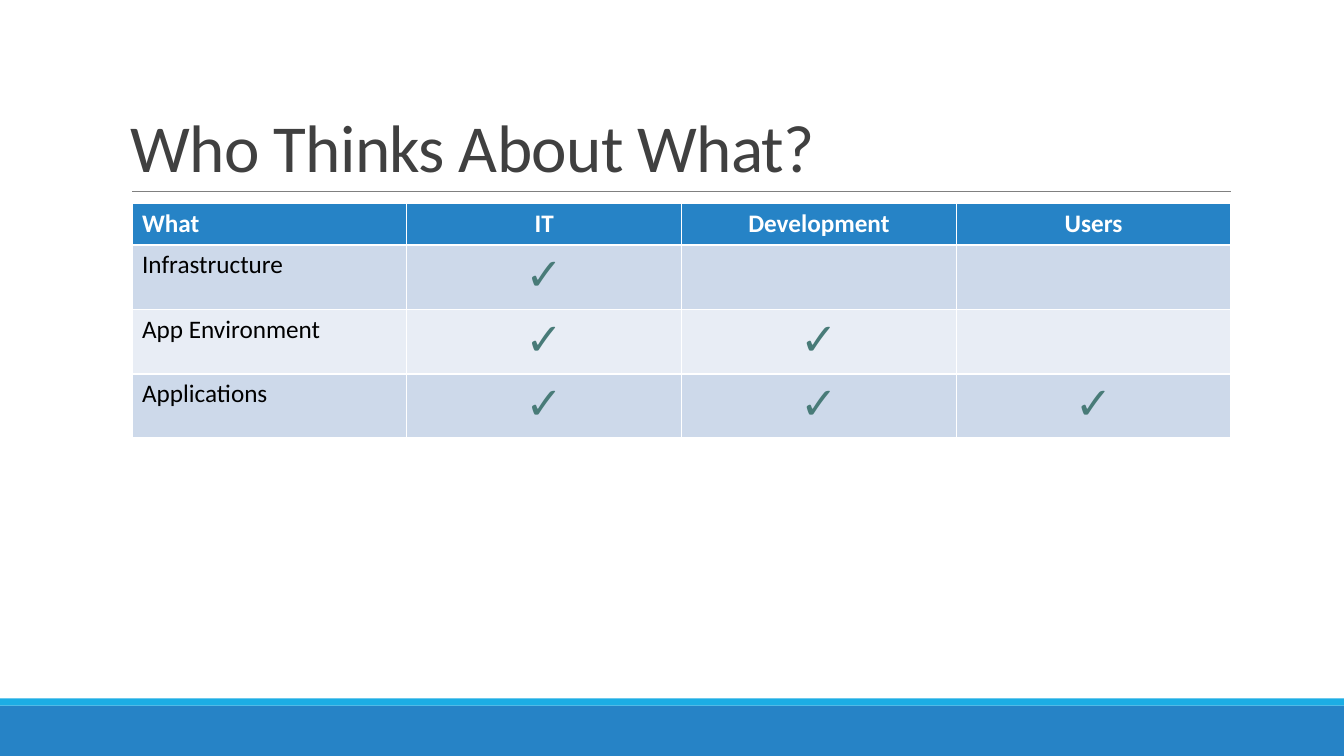
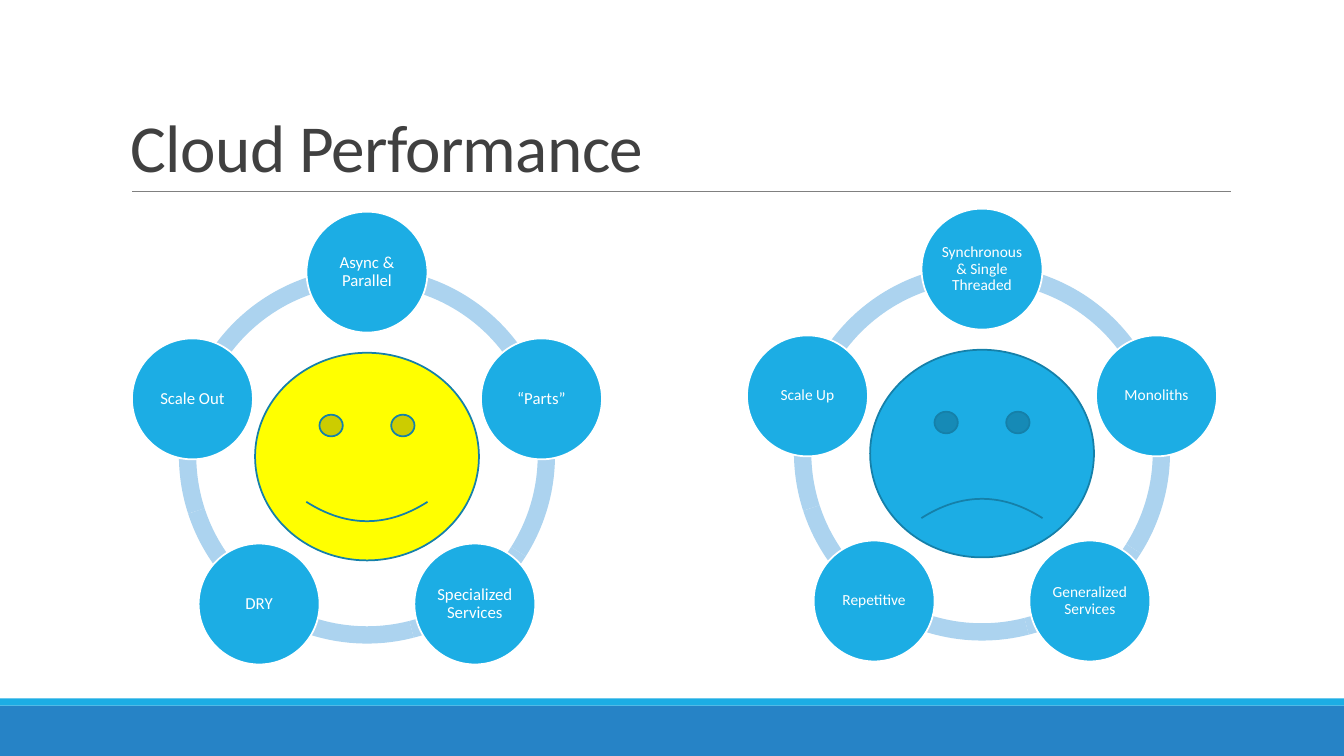
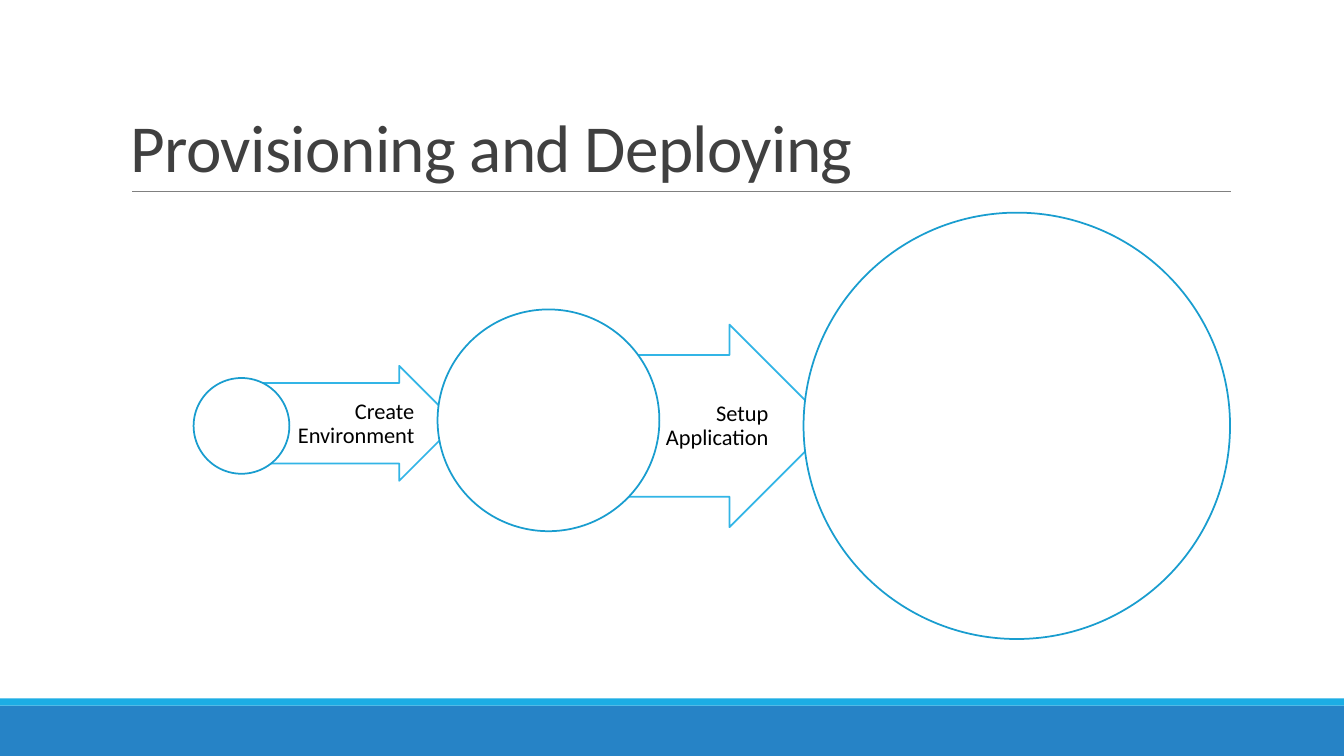
import math

import lxml.etree
import pptx
import pptx.dml.color
import pptx.enum.shapes
import pptx.enum.text
import pptx.oxml.ns
import pptx.util

Inches = pptx.util.Inches
Pt = pptx.util.Pt
Preset = pptx.enum.shapes.MSO_SHAPE
Align = pptx.enum.text.PP_ALIGN
Anchor = pptx.enum.text.MSO_ANCHOR
rgb = pptx.dml.color.RGBColor.from_string
qn = pptx.oxml.ns.qn

BLUE = "2683C6"
SKY = "1CADE4"
PALE_BLUE = "ACD3EF"
WHITE = "FFFFFF"
BLACK = "000000"
OUTLINE = "199DCF"


def write(frame, text, size=18, color=BLACK, font="Calibri", bold=False,
          align=Align.LEFT, anchor=None, spacing=None, tracking=None, insets=None):
    """Fill a text frame with one formatted paragraph; insets run left, top, right, bottom."""
    frame.word_wrap = True
    if anchor is not None:
        frame.vertical_anchor = anchor
    if insets:
        (frame.margin_left, frame.margin_top,
         frame.margin_right, frame.margin_bottom) = map(Inches, insets)
    paragraph = frame.paragraphs[0]
    paragraph.alignment = align
    if spacing:
        paragraph.line_spacing = spacing
    run = paragraph.add_run()
    run.text = text
    run.font.size = Pt(size)
    run.font.name = font
    run.font.bold = bold
    run.font.color.rgb = rgb(color)
    if tracking:
        run.font._element.set("spc", str(round(tracking * 100)))


def draw(slide, preset, box, fill, line=None):
    """Add a flat preset shape; box is left, top, width, height in inches."""
    shape = slide.shapes.add_shape(preset, *map(Inches, box))
    shape.shadow.inherit = False
    shape.fill.solid()
    shape.fill.fore_color.rgb = rgb(fill)
    if line:
        shape.line.color.rgb = rgb(line)
        shape.line.width = Pt(1.25)
    else:
        shape.line.fill.background()
    return shape


deck = pptx.Presentation()
deck.slide_width = Inches(13.33)
deck.slide_height = Inches(7.5)

# Shared frame: bottom bands, rule and title
slides = []
for heading in ("Who Thinks About What?", "Cloud Performance", "Provisioning and Deploying"):
    slide = deck.slides.add_slide(deck.slide_layouts[6])
    draw(slide, Preset.RECTANGLE, (0, 7, 13.33, 0.5), BLUE)
    draw(slide, Preset.RECTANGLE, (0, 6.93, 13.33, 0.07), SKY)
    rule = slide.shapes.add_connector(
        pptx.enum.shapes.MSO_CONNECTOR.STRAIGHT,
        Inches(1.31), Inches(1.9), Inches(12.21), Inches(1.9))
    rule.line.color.rgb = rgb("808080")
    rule.line.width = Pt(0.5)
    lxml.etree.SubElement(rule._element.spPr, qn("a:effectLst"))
    title = slide.shapes.add_textbox(Inches(1.2), Inches(0.31), Inches(11), Inches(1.59))
    write(title.text_frame, heading, size=48, color="404040",
          anchor=Anchor.BOTTOM, spacing=0.85, tracking=-0.5)
    slides.append(slide)
roles_slide, performance_slide, deploying_slide = slides

# Who thinks about what
concerns = [
    ("What", "IT", "Development", "Users"),
    ("Infrastructure", "✓", "", ""),
    ("App Environment", "✓", "✓", ""),
    ("Applications", "✓", "✓", "✓"),
]
row_fills = (BLUE, "CDD9EA", "E8EDF5", "CDD9EA")
row_heights = (0.41, 0.64, 0.64, 0.6)
matrix = roles_slide.shapes.add_table(
    4, 4, Inches(1.31), Inches(2.02), Inches(10.9), Inches(sum(row_heights))).table
for row, (entries, fill, height) in enumerate(zip(concerns, row_fills, row_heights)):
    matrix.rows[row].height = Inches(height)
    for column, entry in enumerate(entries):
        cell = matrix.cell(row, column)
        cell.fill.solid()
        cell.fill.fore_color.rgb = rgb(fill)
        align = Align.CENTER if column else Align.LEFT
        if entry == "✓":
            write(cell.text_frame, entry, size=32, color="487B78", font="Arial",
                  bold=True, align=align)
        elif entry:
            write(cell.text_frame, entry, color=BLACK if row else WHITE,
                  bold=row == 0, align=align)

# Good and bad habits around a happy and a sad face
RING = 3.73
NODE = 1.2
ORBIT = 1.82
FACE_WIDTH, FACE_HEIGHT = 2.22, 2.06
arc_bounds = (32.4, 75.6, 118.8, 162, 205.2)
cycles = [
    (9.74, 4.49, 11, SKY, -0.047,
     ("Synchronous & Single Threaded", "Monoliths", "Generalized Services",
      "Repetitive", "Scale Up")),
    (3.64, 4.52, 12, "FFFF00", 0.047,
     ("Async & Parallel", "“Parts”", "Specialized Services", "DRY", "Scale Out")),
]
for center_x, center_y, size, face_fill, smile, habits in cycles:
    for start, end in zip(arc_bounds, arc_bounds[1:] + arc_bounds[:1]):
        arc = draw(performance_slide, Preset.BLOCK_ARC,
                   (center_x - RING / 2, center_y - RING / 2, RING, RING), PALE_BLUE)
        # Angles are stored in 60000ths of a degree, adjustments in 100000ths
        arc.adjustments[0] = start * 0.6
        arc.adjustments[1] = end * 0.6
        arc.adjustments[2] = 0.046
    for index, habit in enumerate(habits):
        angle = math.radians(index * 72 - 90)
        node = draw(performance_slide, Preset.OVAL,
                    (center_x + ORBIT * math.cos(angle) - NODE / 2,
                     center_y + ORBIT * math.sin(angle) - NODE / 2, NODE, NODE),
                    SKY, WHITE)
        write(node.text_frame, habit, size=size, color=WHITE, align=Align.CENTER,
              anchor=Anchor.MIDDLE, spacing=0.9, insets=(0.02, 0.02, 0.02, 0.02))
    face = draw(performance_slide, Preset.SMILEY_FACE,
                (center_x - FACE_WIDTH / 2, center_y + 0.01 - FACE_HEIGHT / 2,
                 FACE_WIDTH, FACE_HEIGHT), face_fill, "1580A9")
    face.adjustments[0] = smile

# Growing stages joined by labelled arrows
steps = [
    ("Create Environment", (2.23, 3.63, 2.3, 1.14), (2.8, 3.81, 1.33, 0.8)),
    ("Setup Application", (5.94, 3.22, 2.3, 2.01), (6.52, 3.52, 1.12, 1.41)),
]
for step, arrow_box, label_box in steps:
    arrow = draw(deploying_slide, Preset.RIGHT_ARROW, arrow_box, WHITE, SKY)
    arrow.adjustments[0] = 0.7
    arrow.adjustments[1] = 0.5
    for tint in arrow._element.spPr.iter(qn("a:srgbClr")):
        lxml.etree.SubElement(tint, qn("a:alpha")).set("val", "90000")
    label = deploying_slide.shapes.add_textbox(*map(Inches, label_box))
    write(label.text_frame, step, size=16, align=Align.RIGHT, anchor=Anchor.MIDDLE,
          spacing=0.9, insets=(0.04, 0.01, 0.02, 0.01))
for stage_box in ((1.92, 3.75, 0.95, 0.95), (4.34, 3.07, 2.2, 2.2), (7.97, 2.11, 4.23, 4.23)):
    draw(deploying_slide, Preset.OVAL, stage_box, WHITE, OUTLINE)

deck.save("out.pptx")
